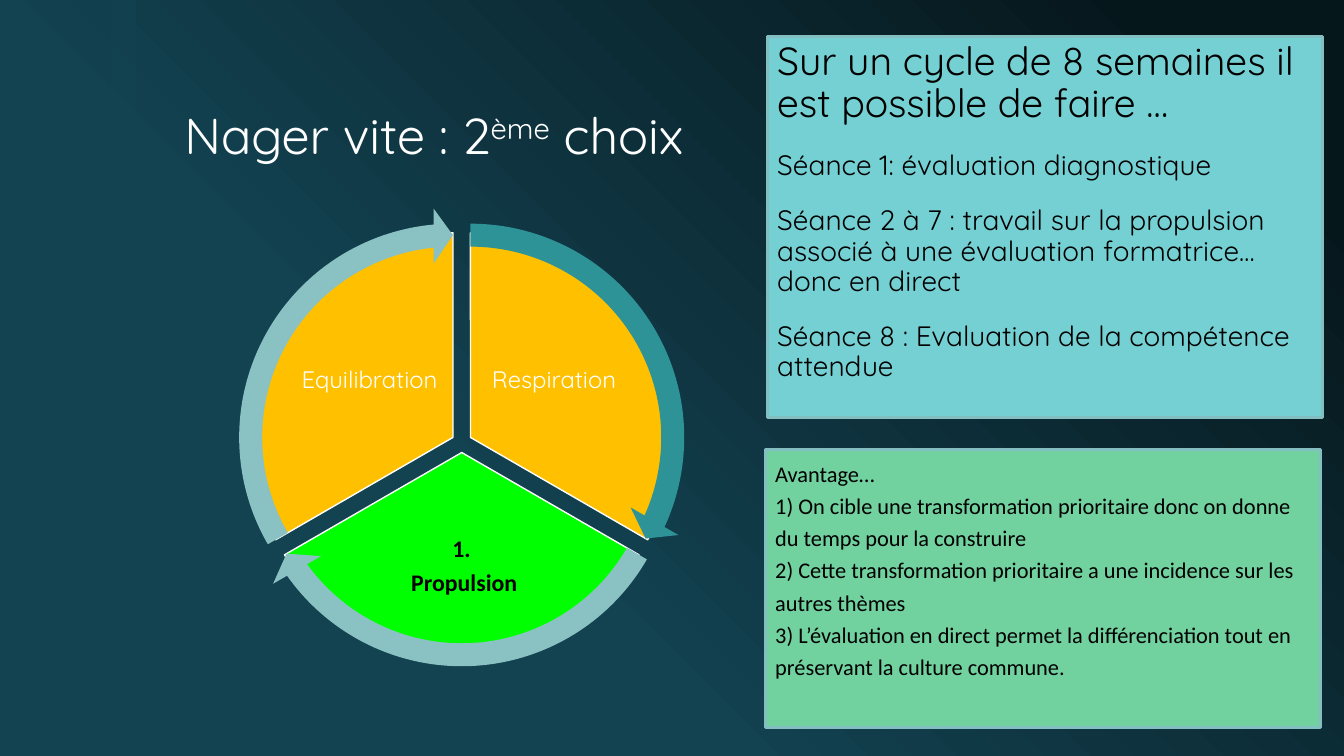
from math import cos, radians, sin

from lxml import etree
from pptx import Presentation
from pptx.dml.color import RGBColor
from pptx.enum.shapes import MSO_SHAPE
from pptx.enum.text import MSO_ANCHOR, PP_ALIGN
from pptx.oxml.ns import qn
from pptx.util import Inches, Pt

RECT, PIE, ARROW = MSO_SHAPE.RECTANGLE, MSO_SHAPE.PIE, MSO_SHAPE.CIRCULAR_ARROW
TOP, MIDDLE, BOTTOM = MSO_ANCHOR.TOP, MSO_ANCHOR.MIDDLE, MSO_ANCHOR.BOTTOM
LEFT, CENTER = PP_ALIGN.LEFT, PP_ALIGN.CENTER

COLORS = {
    "night": "06171C", "deep": "134251", "white": "FFFFFF", "black": "000000",
    "gold": "FFC000", "green": "00FF00", "teal": "2E9396", "mist": "8AC1C2",
    "aqua": "75D0D3", "mint": "71D19F", "edge": "83BEC0",
}
TITLE = {"name": "Quicksand", "size": Pt(36)}
HEAD = {"name": "Quicksand", "size": Pt(28)}
BODY = {"name": "Quicksand", "size": Pt(20)}
NOTE = {"name": "Calibri", "size": Pt(16)}
LABEL = {"name": "Quicksand", "size": Pt(17)}
FOCUS = {"name": "Calibri", "size": Pt(17), "bold": True}

THEMES = [
    (["Respiration"], LABEL, "white", "gold", "teal", (4.77, 3.17, 1.45, 1.21)),
    (["1. ", "Propulsion"], FOCUS, "black", "green", "mist", (3.52, 5.09, 2.17, 1.06)),
    (["Equilibration"], LABEL, "white", "gold", "mist", (2.94, 3.17, 1.45, 1.21)),
]
PLAN = [
    "Sur un cycle de 8 semaines il est possible de faire …",
    "Séance 1: évaluation diagnostique",
    "Séance 2 à 7 : travail sur la propulsion associé à une évaluation formatrice… donc en direct",
    "Séance 8 : Evaluation de la compétence attendue",
]
GAINS = [
    "Avantage…",
    "1) On cible une transformation prioritaire donc on donne du temps pour la construire",
    "2) Cette transformation prioritaire a une incidence sur les autres thèmes",
    "3) L’évaluation en direct permet la différenciation tout en préservant la culture commune.",
]


def rgb(key):
    """Return the named colour."""
    return RGBColor.from_string(COLORS[key])


def paint(shape, fill, line=None, width=1):
    """Set fill and outline, without shadow."""
    shape.shadow.inherit = False
    shape.fill.solid()
    shape.fill.fore_color.rgb = rgb(fill)
    if line:
        shape.line.color.rgb = rgb(line)
        shape.line.width = Pt(width)
    else:
        shape.line.fill.background()


def add_run(para, text, style, color):
    """Append a styled run."""
    run = para.add_run()
    run.text = text
    for key, value in style.items():
        setattr(run.font, key, value)
    run.font.color.rgb = rgb(color)
    return run


def write(shape, lines, color, space=0.9, gap=0, align=LEFT, anchor=TOP, pad=(0.1, 0.05)):
    """Write paragraphs given as lists of text and style pairs."""
    frame = shape.text_frame
    form = {
        "word_wrap": True, "vertical_anchor": anchor,
        "margin_left": Inches(pad[0]), "margin_right": Inches(pad[0]),
        "margin_top": Inches(pad[1]), "margin_bottom": Inches(pad[1]),
    }
    for key, value in form.items():
        setattr(frame, key, value)
    for i, (text, style) in enumerate(lines):
        para = frame.add_paragraph() if i else frame.paragraphs[0]
        para.alignment = align
        para.line_spacing = space
        para.space_before = Pt(gap if i else 0)
        add_run(para, text, style, color)
    return frame


def backdrop(slide, box):
    """Paint the gradient and the faint vertical band."""
    fill = slide.background.fill
    fill.gradient()
    fill.gradient_angle = 225
    for stop, spot, key in zip(fill.gradient_stops, (0.1, 0.65), ("night", "deep")):
        stop.position = spot
        stop.color.rgb = rgb(key)
    band = slide.shapes.add_shape(RECT, *map(Inches, box))
    paint(band, "deep")
    tint = band.fill._xPr.find(qn("a:solidFill"))[0]
    etree.SubElement(tint, qn("a:alpha")).set("val", "60000")


def title(slide, box):
    """Place the heading with its raised ordinal."""
    shape = slide.shapes.add_textbox(*map(Inches, box))
    frame = write(shape, [("Nager vite : 2", TITLE)], "white", anchor=BOTTOM)
    para = frame.paragraphs[0]
    raised = add_run(para, "ème", TITLE, "white")
    raised._r.get_or_add_rPr().set("baseline", "30000")
    add_run(para, " choix", TITLE, "white")


def panel(slide, box, lines, fill, **form):
    """Place a framed text panel."""
    shape = slide.shapes.add_shape(RECT, *map(Inches, box))
    paint(shape, fill, "edge", 2.25)
    write(shape, lines, "black", **form)


def disc(slide, kind, mid, size, values, fill, line=None):
    """Place a round preset about a centre, with its adjustments."""
    box = mid[0] - size / 2, mid[1] - size / 2, size, size
    shape = slide.shapes.add_shape(kind, *map(Inches, box))
    for i, value in enumerate(values):
        shape.adjustments[i] = value
    paint(shape, fill, line)


def turn(angle):
    """Convert degrees to an angle adjustment."""
    return angle % 360 * 0.6


def wheel(slide, box):
    """Build the wheel of three slices, then its arrows."""
    left, top, size = box
    hub = left + size / 2, top + size / 2
    rings = []
    for i, (lines, style, color, fill, ring, area) in enumerate(THEMES):
        start = 120 * i - 90
        way = radians(start + 60)
        mid = hub[0] + 0.1 * cos(way), hub[1] + 0.1 * sin(way)
        ends = turn(start), turn(start + 120)
        disc(slide, PIE, mid, 4.06, ends, fill, "white")
        label = slide.shapes.add_textbox(*map(Inches, area))
        write(label, [(line, style) for line in lines], color, gap=6,
              align=CENTER, anchor=MIDDLE, pad=(0.02, 0.02))
        sweep = 0.05, turn(5.5), turn(start + 114.5), turn(start), 0.06
        rings.append((mid, size, sweep, ring))
    for ring in rings:
        disc(slide, ARROW, *ring)


def main():
    """Build and save the slide."""
    deck = Presentation()
    deck.slide_width, deck.slide_height = Inches(13.33), Inches(7.5)
    slide = deck.slides.add_slide(deck.slide_layouts[6])
    backdrop(slide, (1.1, 0, 0.25, 7.5))
    wheel(slide, (2.3, 2.11, 4.56))
    plan = [(text, BODY if i else HEAD) for i, text in enumerate(PLAN)]
    panel(slide, (7.61, 0.36, 5.51, 3.78), plan, "aqua", gap=18)
    title(slide, (1.73, 0.36, 5.69, 1.33))
    gains = [(text, NOTE) for text in GAINS]
    panel(slide, (7.59, 4.46, 5.51, 2.76), gains, "mint", space=1.2)
    deck.save("out.pptx")


if __name__ == "__main__":
    main()
